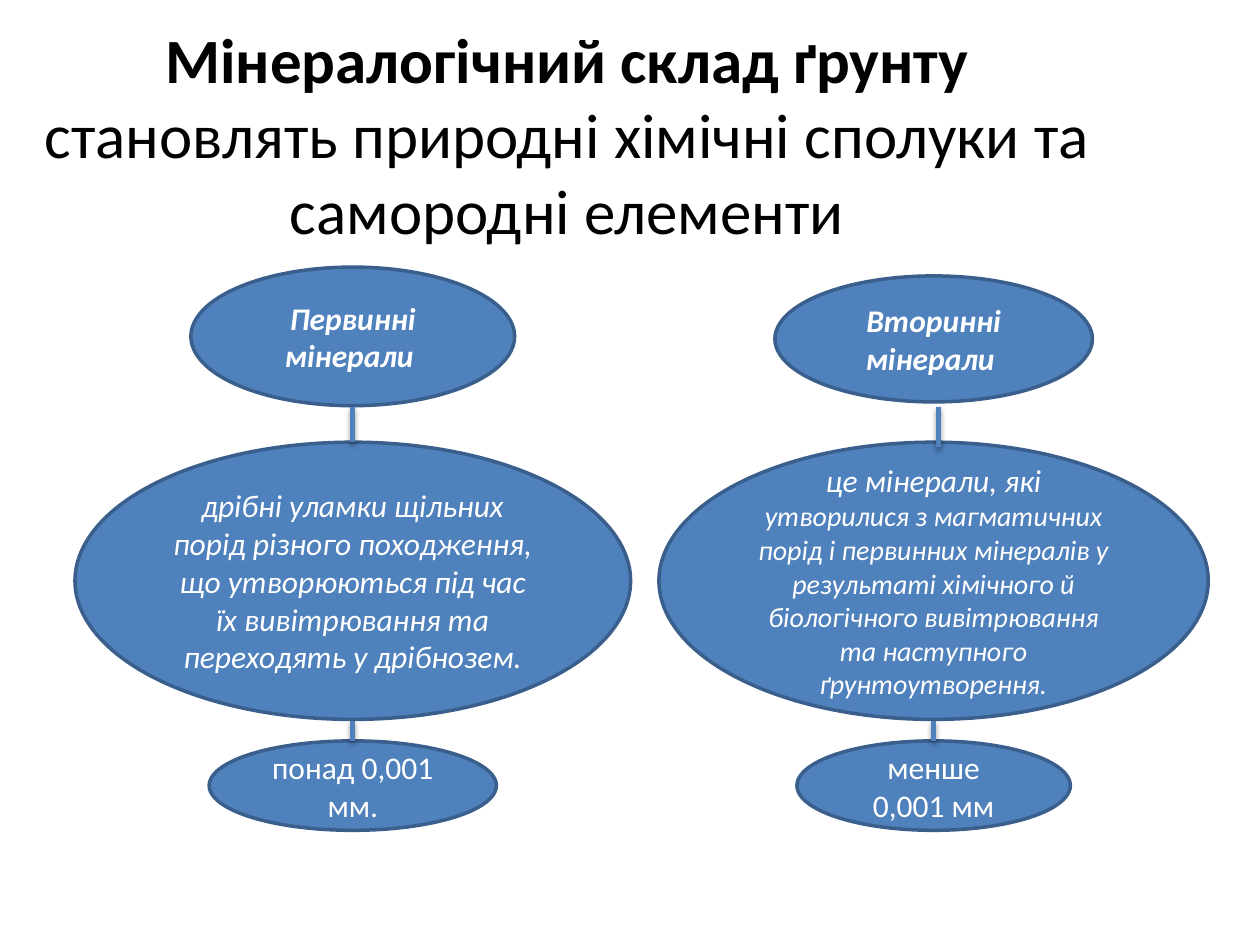
import pptx
import pptx.util
import pptx.dml.color
import pptx.enum.shapes
import pptx.enum.text

Inches = pptx.util.Inches
COLORS = {"title": "000000", "fill": "4F81BD", "outline": "3A5F8C", "text": "FFFFFF"}
FONT = "Calibri"

TITLE = ("Мінералогічний склад ґрунту", "становлять природні хімічні сполуки та самородні елементи")

# Each column: centre, ellipses as (top, width, height, spans), links as (x, top, bottom).
# Each span: text, size, bold, italic.
COLUMNS = [
    {
        "center": 2.8,
        "ellipses": [
            (2.12, 2.57, 1.1, [("Первинні мінерали ", 18, True, True)]),
            (3.51, 4.41, 2.2, [("дрібні уламки щільних порід різного походження, що утворюються "
                                "під час їх вивітрювання та переходять у дрібнозем.", 18, False, True)]),
            (5.88, 2.28, 0.71, [("понад 0,001 мм.", 18, False, False)]),
        ],
        "links": [(2.8, 3.23, 3.51), (2.8, 5.72, 5.88)],
    },
    {
        "center": 7.41,
        "ellipses": [
            (2.19, 2.52, 1.0, [("Вторинні мінерали ", 18, True, True)]),
            (3.51, 4.36, 2.2, [("це мінерали, які ", 18, False, True),
                               ("утворилися з магматичних порід і первинних мінералів у результаті "
                                "хімічного й біологічного вивітрювання та наступного "
                                "ґрунтоутворення.", 16, False, True)]),
            (5.88, 2.17, 0.71, [("менше 0,001 мм", 18, False, False)]),
        ],
        "links": [(7.45, 3.23, 3.55), (7.41, 5.72, 5.88)],
    },
]


def rgb(name):
    return pptx.dml.color.RGBColor.from_string(COLORS[name])


def add_span(para, text, size=18, bold=False, italic=False, color="text"):
    span = para.add_run()
    span.text = text
    span.font.name = FONT
    span.font.size = pptx.util.Pt(size)
    span.font.bold = bold
    span.font.italic = italic
    span.font.color.rgb = rgb(color)


def centered_paragraph(shape):
    """Centre the shape's text both ways and return its first paragraph."""
    frame = shape.text_frame
    frame.word_wrap = True
    frame.auto_size = pptx.enum.text.MSO_AUTO_SIZE.NONE
    frame.vertical_anchor = pptx.enum.text.MSO_ANCHOR.MIDDLE
    para = frame.paragraphs[0]
    para.alignment = pptx.enum.text.PP_ALIGN.CENTER
    return para


def add_title(page):
    title = page.shapes.title
    title.left, title.top, title.width, title.height = map(Inches, (0, 0.28, 9, 1.56))
    para = centered_paragraph(title)
    add_span(para, TITLE[0], size=36, bold=True, color="title")
    para.add_line_break()
    add_span(para, TITLE[1], size=36, color="title")


def add_ellipse(page, center, top, width, height, spans):
    ellipse = page.shapes.add_shape(
        pptx.enum.shapes.MSO_SHAPE.OVAL,
        *map(Inches, (center - width / 2, top, width, height)))
    ellipse.shadow.inherit = False
    ellipse.fill.solid()
    ellipse.fill.fore_color.rgb = rgb("fill")
    ellipse.line.color.rgb = rgb("outline")
    ellipse.line.width = pptx.util.Pt(2)
    para = centered_paragraph(ellipse)
    for text, size, bold, italic in spans:
        add_span(para, text, size=size, bold=bold, italic=italic)


def add_link(page, x, top, bottom):
    """Draw a vertical link that keeps the soft shadow of the theme."""
    link = page.shapes.add_connector(
        pptx.enum.shapes.MSO_CONNECTOR.STRAIGHT, *map(Inches, (x, top, x, bottom)))
    link.line.color.rgb = rgb("fill")
    link.line.width = pptx.util.Pt(3)


def main():
    deck = pptx.Presentation()
    deck.slide_width, deck.slide_height = Inches(10), Inches(7.5)
    page = deck.slides.add_slide(deck.slide_layouts.get_by_name("Title Only"))
    add_title(page)
    for column in COLUMNS:
        for ellipse in column["ellipses"]:
            add_ellipse(page, column["center"], *ellipse)
    for column in COLUMNS:
        for link in column["links"]:
            add_link(page, *link)
    deck.save("out.pptx")


if __name__ == "__main__":
    main()
